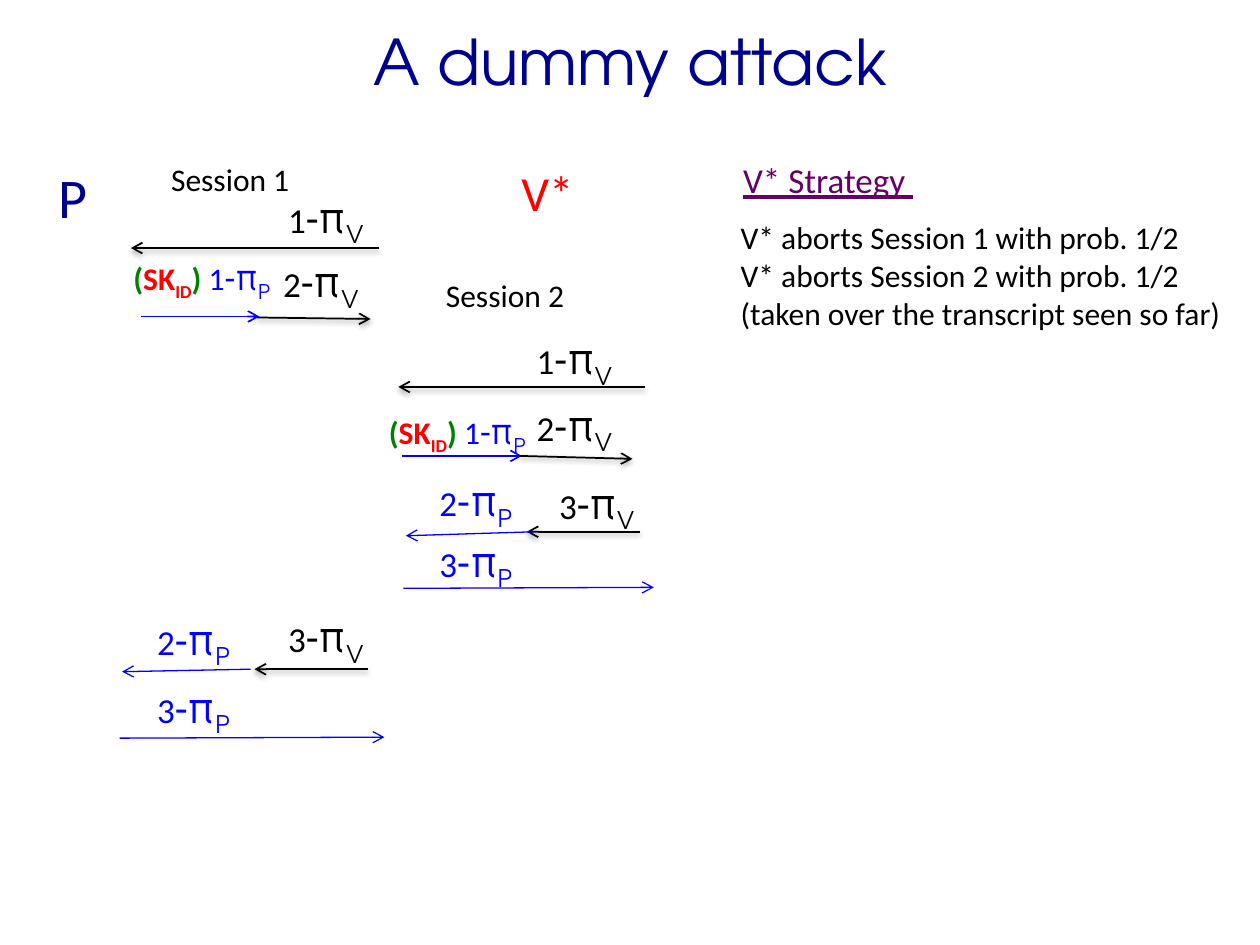
from lxml import etree
from pptx import Presentation
from pptx import util as u
from pptx.dml.color import RGBColor
from pptx.enum import shapes, text
from pptx.oxml.ns import qn

BODY, ROUND = "Calibri", "TeX Gyre Adventor"
BLACK, NAVY, BLUE = "000000", "000090", "0000FF"
RED, GREEN, PURPLE = "FF0000", "008000", "660066"

# Each session: its name, key message, numbered messages and arrows, in cm
SESSIONS = [
    {
        "name": ("Session 1", 3.2, 3.1),
        "key": (2.44, 5.03),
        "verifier": [("1", 5.56, 3.73), ("2", 5.46, 5.03), ("3", 5.56, 12.19)],
        "prover": [("2", 2.92, 12.24), ("3", 2.92, 13.61)],
        "key arrow": (2.84, 6.38, 5.23, 6.38),
        "verifier arrows": [(7.65, 5, 2.64, 5), (5.18, 6.4, 7.47, 6.43),
                            (7.42, 13.49, 5.13, 13.49)],
        "prover arrows": [(5.05, 13.49, 2.46, 13.54), (2.41, 14.88, 7.75, 14.86)],
    },
    {
        "name": ("Session 2", 8.74, 5.44),
        "key": (7.59, 8.13),
        "verifier": [("1", 10.57, 6.58), ("2", 10.57, 7.92), ("3", 11.02, 9.5)],
        "prover": [("2", 8.61, 9.45), ("3", 8.61, 10.67)],
        "key arrow": (8.1, 9.19, 10.52, 9.19),
        "verifier arrows": [(13, 7.8, 8.03, 7.8), (10.46, 9.19, 12.75, 9.25),
                            (12.9, 10.72, 10.62, 10.72)],
        "prover arrows": [(10.77, 10.72, 8.18, 10.8), (8.13, 11.86, 13.18, 11.84)],
    },
]


def rgb(value):
    return RGBColor.from_string(value)


def format_run(r, size, color, font=BODY, bold=False, underline=False, sub=False):
    f = r.font
    f.size, f.name, f.bold, f.underline = u.Pt(size), font, bold, underline
    f.color.rgb = rgb(color)
    if sub:
        r._r.get_or_add_rPr().set("baseline", "-25000")


def add_box(s, x, y, w, h, wrap=True):
    sp = s.shapes.add_textbox(u.Cm(x), u.Cm(y), u.Cm(w), u.Cm(h))
    sp.text_frame.word_wrap = wrap
    return sp.text_frame


def add_label(s, lines, x, y, w, h, size, color, font=BODY, underline=False):
    tf = add_box(s, x, y, w, h)
    tf.text = lines
    for p in tf.paragraphs:
        for r in p.runs:
            format_run(r, size, color, font, underline=underline)
    return tf


def add_runs(s, x, y, w, h, runs):
    """Unwrapped line of (text, format) runs."""
    p = add_box(s, x, y, w, h, wrap=False).paragraphs[0]
    for content, style in runs:
        r = p.add_run()
        r.text = content
        format_run(r, **style)


def pi_runs(number, party, color, number_size, pi_size):
    pi = {"size": pi_size, "color": color}
    return [
        (number, {"size": number_size, "color": color}),
        ("-", pi),
        ("π", {**pi, "font": ROUND}),
        (party, {**pi, "font": ROUND, "sub": True}),
    ]


def add_message(s, number, party, x, y, color):
    add_runs(s, x, y, 2.2, 1.24, pi_runs(number, party, color, 20, 24))


def add_key_message(s, x, y):
    green = {"size": 18, "color": GREEN, "bold": True}
    red = {**green, "color": RED}
    key = [("(", green), ("SK", red), ("ID", {**red, "sub": True}), (") ", green)]
    add_runs(s, x, y, 3.48, 1.12, key + pi_runs("1", "P", BLUE, 18, 20))


def add_arrow(s, ends, color, width, shadow=False):
    line = s.shapes.add_connector(shapes.MSO_CONNECTOR.STRAIGHT,
                                  *(u.Cm(v) for v in ends))
    line.line.color.rgb = rgb(color)
    line.line.width = u.Pt(width)
    ln = line.line._get_or_add_ln()
    etree.SubElement(ln, qn("a:tailEnd"), type="arrow")
    effects = etree.SubElement(line._element.spPr, qn("a:effectLst"))
    if shadow:
        outer = etree.SubElement(effects, qn("a:outerShdw"), blurRad="40000",
                                 dist="20000", dir="5400000", rotWithShape="0")
        shade = etree.SubElement(outer, qn("a:srgbClr"), val=BLACK)
        etree.SubElement(shade, qn("a:alpha"), val="38000")


def add_session(s, session):
    name, x, y = session["name"]
    add_label(s, name, x, y, 3.48, 1.04, 18, BLACK)
    add_key_message(s, *session["key"])
    add_arrow(s, session["key arrow"], BLUE, 1)
    for ends in session["verifier arrows"]:
        add_arrow(s, ends, BLACK, 1, shadow=True)
    for ends in session["prover arrows"]:
        add_arrow(s, ends, BLUE, 0.75)
    for number, x, y in session["verifier"]:
        add_message(s, number, "V", x, y, BLACK)
    for number, x, y in session["prover"]:
        add_message(s, number, "P", x, y, BLUE)


def main():
    prs = Presentation()
    prs.slide_width, prs.slide_height = u.Cm(25.4), u.Cm(19.05)
    s = prs.slides.add_slide(prs.slide_layouts[6])

    # Title
    tf = add_label(s, "A dummy attack", 1.27, 0, 22.86, 2.44, 36, NAVY, ROUND)
    tf.vertical_anchor = text.MSO_ANCHOR.MIDDLE
    tf.paragraphs[0].alignment = text.PP_ALIGN.CENTER

    # Parties
    add_label(s, "P", 0.94, 3.15, 1.75, 1.63, 32, NAVY)
    add_label(s, "V*", 10.26, 3.15, 1.75, 1.45, 28, RED)

    # Interleaved sessions
    for session in SESSIONS:
        add_session(s, session)

    # Strategy of the verifier
    add_label(s, "V* Strategy ", 14.73, 3.07, 6.71, 1.12, 20, PURPLE, underline=True)
    add_label(s, "V* aborts Session 1 with prob. 1/2\n"
                 "V* aborts Session 2 with prob. 1/2\n"
                 "(taken over the transcript seen so far)",
              14.68, 4.27, 10.72, 2.57, 18, BLACK)

    prs.save("out.pptx")


if __name__ == "__main__":
    main()
